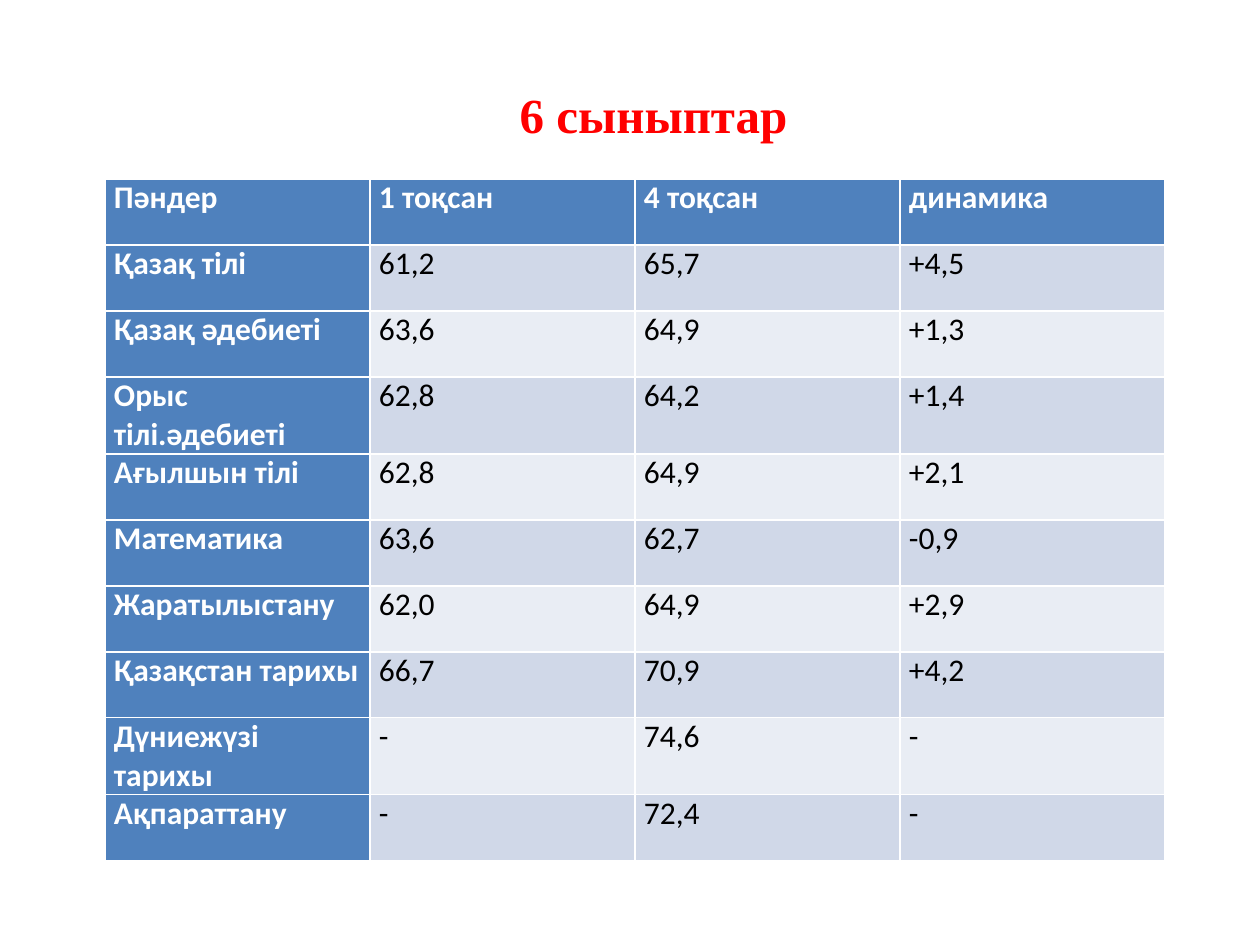
"""Builds a slide with a table of quarterly results by subject for grade 6."""
from pptx import Presentation
from pptx.dml.color import RGBColor
from pptx.enum.text import MSO_ANCHOR, MSO_AUTO_SIZE, PP_ALIGN
from pptx.util import Pt

TITLE = "6 сыныптар"
ROWS = [
    ("Пәндер", "1 тоқсан", "4 тоқсан", "динамика"),
    ("Қазақ тілі", "61,2", "65,7", "+4,5"),
    ("Қазақ әдебиеті", "63,6", "64,9", "+1,3"),
    ("Орыс тілі.әдебиеті", "62,8", "64,2", "+1,4"),
    ("Ағылшын тілі", "62,8", "64,9", "+2,1"),
    ("Математика", "63,6", "62,7", "-0,9"),
    ("Жаратылыстану", "62,0", "64,9", "+2,9"),
    ("Қазақстан тарихы", "66,7", "70,9", "+4,2"),
    ("Дүниежүзі тарихы", "-", "74,6", "-"),
    ("Ақпараттану", "-", "72,4", "-"),
]

WHITE = RGBColor(0xFF, 0xFF, 0xFF)
BLACK = RGBColor(0x00, 0x00, 0x00)
RED = RGBColor(0xFF, 0x00, 0x00)
BLUE = RGBColor(0x4F, 0x81, 0xBD)
BANDS = (RGBColor(0xE9, 0xED, 0xF4), RGBColor(0xD0, 0xD8, 0xE8))

SLIDE_WIDTH, SLIDE_HEIGHT = 1260, 945
TITLE_BOX = (186, 50, 935, 136)
TABLE_LEFT, TABLE_TOP = 105, 179
COLUMN_WIDTH, ROW_HEIGHT = 265, 66
CELL_MARGIN = 9


def px(length):
    """Converts px to EMU."""
    return length * 914400 // 126


def style_run(run, font_name, size, color, bold):
    """Formats the font of one run."""
    font = run.font
    font.name, font.size, font.bold = font_name, Pt(size), bold
    font.color.rgb = color


def add_title(slide):
    """Moves and formats the title placeholder."""
    title = slide.shapes.title
    title.left, title.top, title.width, title.height = map(px, TITLE_BOX)
    title.fill.solid()
    title.fill.fore_color.rgb = WHITE
    frame = title.text_frame
    frame.text = TITLE
    frame.auto_size = MSO_AUTO_SIZE.NONE
    frame.vertical_anchor = MSO_ANCHOR.MIDDLE
    frame.margin_bottom = px(14)
    paragraph = frame.paragraphs[0]
    paragraph.alignment = PP_ALIGN.CENTER
    style_run(paragraph.runs[0], "Times New Roman", 28, RED, True)


def fill_cell(cell, text, is_heading, band):
    """Writes one table cell."""
    cell.margin_left = cell.margin_right = px(CELL_MARGIN)
    cell.margin_top = cell.margin_bottom = 0
    cell.fill.solid()
    cell.fill.fore_color.rgb = BLUE if is_heading else band
    cell.text_frame.text = text
    paragraph = cell.text_frame.paragraphs[0]
    paragraph.alignment = PP_ALIGN.JUSTIFY
    color = WHITE if is_heading else BLACK
    style_run(paragraph.runs[0], "Calibri", 18, color, is_heading)


def add_results_table(slide):
    """Adds the table of results."""
    row_count, column_count = len(ROWS), len(ROWS[0])
    table = slide.shapes.add_table(
        row_count, column_count, px(TABLE_LEFT), px(TABLE_TOP),
        px(COLUMN_WIDTH * column_count), px(ROW_HEIGHT * row_count)).table
    table.first_col = True
    for row_index, values in enumerate(ROWS):
        for column_index, text in enumerate(values):
            is_heading = row_index == 0 or column_index == 0
            fill_cell(table.cell(row_index, column_index), text,
                      is_heading, BANDS[row_index % 2])


def main():
    presentation = Presentation()
    presentation.slide_width = px(SLIDE_WIDTH)
    presentation.slide_height = px(SLIDE_HEIGHT)
    slide = presentation.slides.add_slide(presentation.slide_layouts[5])
    add_title(slide)
    add_results_table(slide)
    presentation.save("out.pptx")


if __name__ == "__main__":
    main()
